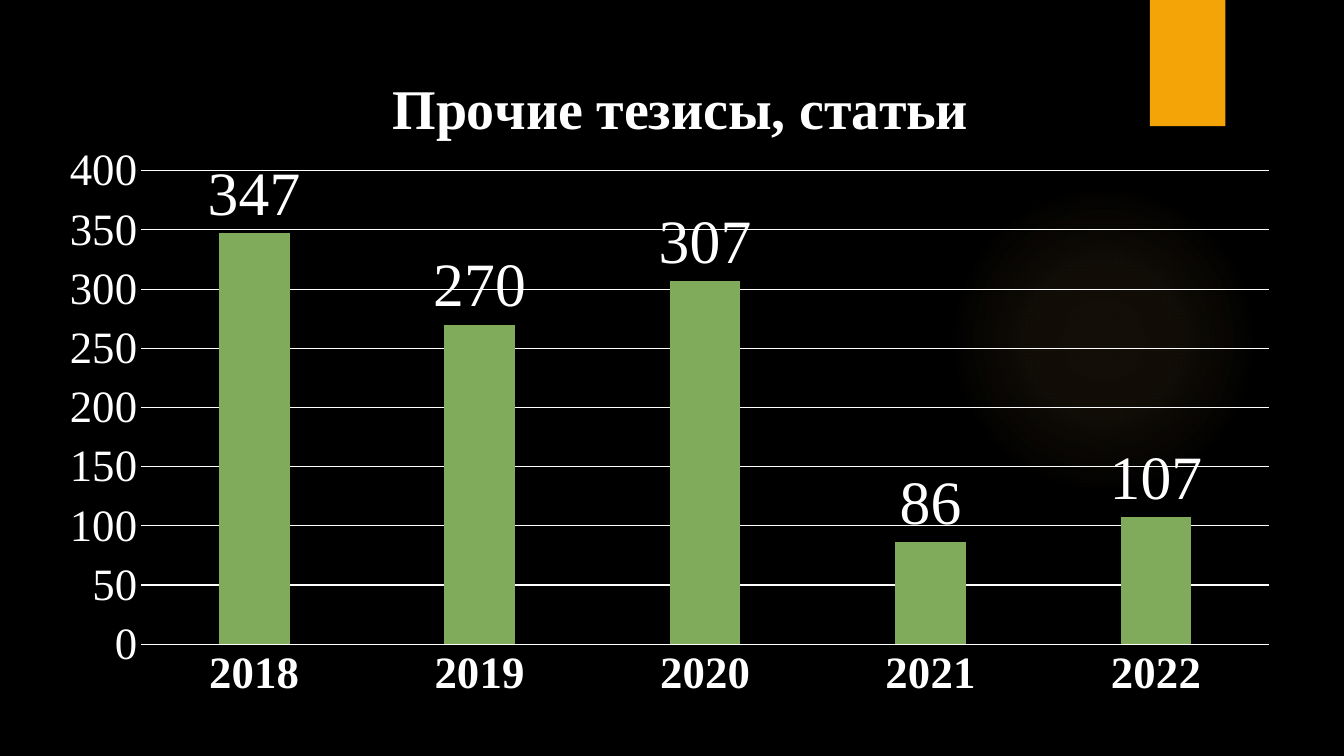
from dataclasses import dataclass

import pptx
import pptx.chart.data
import pptx.dml.color
import pptx.enum.chart
import pptx.enum.shapes
import pptx.oxml
import pptx.oxml.ns
import pptx.util
from pptx.util import Cm


@dataclass(frozen=True)
class Theme:
    background: str = "000000"
    text: str = "FFFFFF"
    accent: str = "F5A408"
    glow: str = "FAC96A"
    bar: str = "7FAB5B"
    base_font: str = "League Spartan"
    font: str = "Times New Roman"
    base_size: int = 10
    axis_size: int = 32
    title_size: int = 40
    value_size: int = 44
    line_width: float = 0.75


THEME = Theme()


def color(value):
    return pptx.dml.color.RGBColor.from_string(value)


def xml(markup, prefix):
    """Build an element whose opening tag carries the namespace of its prefix."""
    name, rest = markup.split(">", 1)
    return pptx.oxml.parse_xml(f"{name} {pptx.oxml.ns.nsdecls(prefix)}>{rest}")


def format_font(font, size, bold=False, name=THEME.font):
    font.name = name
    font.size = pptx.util.Pt(size)
    font.bold = bold
    font.color.rgb = color(THEME.text)


def write(frame, text, **style):
    para = frame.paragraphs[0]
    span = para.add_run()
    span.text = text
    format_font(span.font, **style)


def format_line(line):
    line.width = pptx.util.Pt(THEME.line_width)
    line.color.rgb = color(THEME.text)


def set_layout(parent, index, target="", **fractions):
    """Fix a chart part at fractions of the chart area."""
    for old in parent.findall(pptx.oxml.ns.qn("c:layout")):
        parent.remove(old)
    modes = '<c:xMode val="edge"/><c:yMode val="edge"/>'
    places = "".join(f'<c:{key} val="{value}"/>' for key, value in fractions.items())
    parent.insert(index, xml(
        f"<c:layout><c:manualLayout>{target}{modes}{places}"
        "</c:manualLayout></c:layout>", "c"))


def add_plain_shape(page, kind, box):
    shape = page.shapes.add_shape(kind, *box)
    shape.shadow.inherit = False
    shape.line.fill.background()
    return shape


def add_glow(page, box):
    disc = add_plain_shape(page, pptx.enum.shapes.MSO_SHAPE.OVAL, box)
    disc.fill.background()
    stops = "".join(
        f'<a:gs pos="{place * 1000}"><a:srgbClr val="{THEME.glow}">'
        f'<a:alpha val="{opacity * 1000}"/></a:srgbClr></a:gs>'
        for place, opacity in ((0, 7), (36, 6), (69, 0)))
    gradient = xml(
        f'<a:gradFill><a:gsLst>{stops}</a:gsLst><a:path path="circle">'
        '<a:fillToRect l="50000" t="50000" r="50000" b="50000"/>'
        "</a:path></a:gradFill>", "a")
    properties = disc.element.spPr
    properties.replace(properties.find(pptx.oxml.ns.qn("a:noFill")), gradient)


def add_tab(page, box):
    tab = add_plain_shape(page, pptx.enum.shapes.MSO_SHAPE.RECTANGLE, box)
    tab.fill.solid()
    tab.fill.fore_color.rgb = color(THEME.accent)
    effects = tab.element.spPr.find(pptx.oxml.ns.qn("a:effectLst"))
    effects.append(xml(
        '<a:outerShdw blurRad="38100" dist="25400" dir="5400000" rotWithShape="0">'
        '<a:srgbClr val="000000"><a:alpha val="45000"/></a:srgbClr>'
        "</a:outerShdw>", "a"))


def format_axes(chart):
    no_tick = pptx.enum.chart.XL_TICK_MARK.NONE
    years, counts = chart.category_axis, chart.value_axis
    for axis in (years, counts):
        axis.major_tick_mark = axis.minor_tick_mark = no_tick
        format_font(axis.tick_labels.font, THEME.axis_size, bold=axis is years)
    format_line(years.format.line)
    counts.format.line.fill.background()
    counts.minimum_scale, counts.maximum_scale, counts.major_unit = 0, 400, 50
    counts.has_major_gridlines = True
    format_line(counts.major_gridlines.format.line)


def format_bars(plot):
    plot.gap_width, plot.overlap = 219, -27
    plot.vary_by_categories = False
    series = plot.series[0]
    series.format.fill.solid()
    series.format.fill.fore_color.rgb = color(THEME.bar)
    labels = series.data_labels
    labels.show_value = True
    labels.position = pptx.enum.chart.XL_LABEL_POSITION.OUTSIDE_END
    format_font(labels.font, THEME.value_size)


def add_publications_chart(page, box):
    data = pptx.chart.data.CategoryChartData()
    data.categories = ["2018", "2019", "2020", "2021", "2022"]
    data.add_series("Series 1", (347, 270, 307, 86, 107))
    kind = pptx.enum.chart.XL_CHART_TYPE.COLUMN_CLUSTERED
    chart = page.shapes.add_chart(kind, *box, data).chart
    chart.has_legend = False
    format_font(chart.font, THEME.base_size, name=THEME.base_font)

    # Chart title
    chart.has_title = True
    write(chart.chart_title.text_frame, "Прочие тезисы, статьи",
          size=THEME.title_size, bold=True)
    set_layout(chart.chart_title.element, 1, x=0.27, y=0.03)

    # Plot area
    format_axes(chart)
    format_bars(chart.plots[0])
    plot_area = chart.element.xpath("c:chart/c:plotArea")[0]
    set_layout(plot_area, 0, '<c:layoutTarget val="inner"/>',
               x=0.077, y=0.191, w=0.902, h=0.71)


def add_chart_page(deck):
    page = deck.slides.add_slide(deck.slide_layouts[6])
    page.background.fill.solid()
    page.background.fill.fore_color.rgb = color(THEME.background)
    add_glow(page, (Cm(23.9), Cm(4.65), Cm(7.82), Cm(7.82)))
    add_tab(page, (Cm(28.98), Cm(0), Cm(1.9), Cm(3.18)))
    add_publications_chart(page, (Cm(1.14), Cm(1.09), Cm(31.5), Cm(16.81)))


def main():
    deck = pptx.Presentation()
    deck.slide_width, deck.slide_height = Cm(33.87), Cm(19.05)
    add_chart_page(deck)
    deck.save("out.pptx")


if __name__ == "__main__":
    main()
